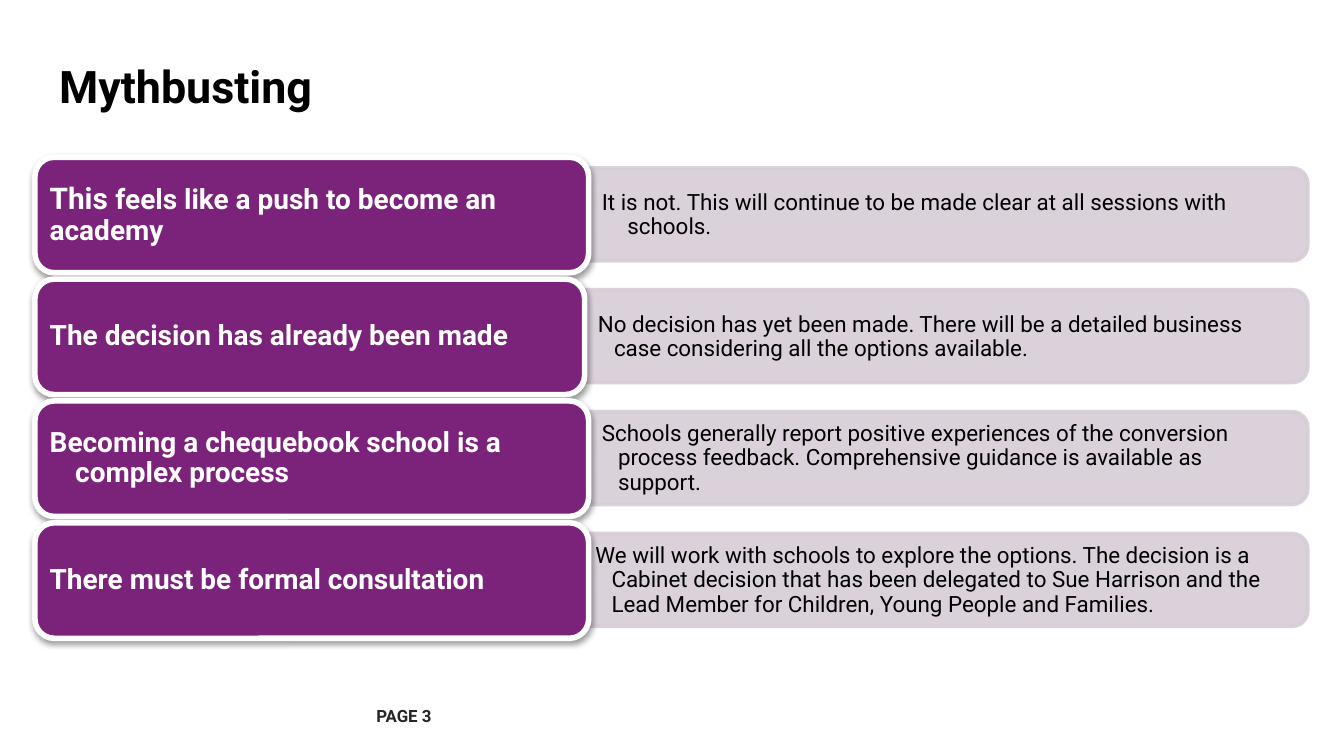
from dataclasses import dataclass

from lxml import etree
from pptx import Presentation
from pptx.dml.color import RGBColor
from pptx.enum import shapes, text
from pptx.oxml import ns
from pptx.util import Inches, Pt


@dataclass(frozen=True)
class Theme:
    font: str = "Roboto"
    myth: str = "7B237A"
    fact: str = "D7CDD7"
    light: str = "FFFFFF"
    dark: str = "000000"
    grey: str = "262626"
    title: int = 24
    lead: int = 16
    head: int = 15
    body: int = 12
    foot: int = 9


T = Theme()

# Each row: myth runs (text, size), myth indent, fact, fact indent, fact insets, card width
ROWS = [
    ([("This ", T.lead), ("feels like a push to become an academy", T.head)], 0,
     "It is not. This will continue to be made clear at all sessions with schools.",
     0.19, (0.1, 0.05), 4.12),
    ([("The decision has already been made", T.head)], 0.19,
     "No decision has yet been made. There will be a detailed business case "
     "considering all the options available.",
     0.12, (0.1, 0.05), 4.09),
    ([("Becoming a chequebook school is a complex process", T.head)], 0.19,
     "Schools generally report positive experiences of the conversion process "
     "feedback. Comprehensive guidance is available as support.",
     0.12, (0.1, 0.05), 4.12),
    ([("There must be formal consultation", T.head)], 0.19,
     "We will work with schools to explore the options. The decision is a Cabinet "
     "decision that has been delegated to Sue Harrison and the Lead Member for "
     "Children, Young People and Families.",
     0.12, (0.05, 0.03), 4.12),
]


def add_sub(node, tag, **attrs):
    return etree.SubElement(node, ns.qn(tag), {k: str(v) for k, v in attrs.items()})


def add_text(slide, box, runs, color, bold=True, indent=0, inset=(0.09, 0.04), space=1.0):
    """Place one paragraph of (text, size) runs, with a hanging indent."""
    frame = slide.shapes.add_textbox(*map(Inches, box)).text_frame
    frame.word_wrap = True
    frame.vertical_anchor = text.MSO_ANCHOR.MIDDLE
    frame.margin_left = frame.margin_right = Inches(inset[0])
    frame.margin_top = frame.margin_bottom = Inches(inset[1])
    para = frame.paragraphs[0]
    para.line_spacing = space
    if indent:
        props = para._p.get_or_add_pPr()
        props.set("marL", str(Inches(indent)))
        props.set("indent", str(-Inches(indent)))
    for words, size in runs:
        run = para.add_run()
        run.text = words
        run.font.name = T.font
        run.font.size = Pt(size)
        run.font.bold = bold
        run.font.color.rgb = RGBColor.from_string(color)


def add_block(slide, kind, box, fill, line, width):
    shape = slide.shapes.add_shape(kind, *map(Inches, box))
    shape.shadow.inherit = False
    shape.fill.solid()
    shape.fill.fore_color.rgb = RGBColor.from_string(fill)
    shape.line.color.rgb = RGBColor.from_string(line)
    shape.line.width = Pt(width)
    return shape


def add_fact(slide, box, words, indent, inset):
    """A pale bar, rounded on its right end, with the answer on it."""
    x, y, w, h = box
    # The preset is rounded on top, so build it upright and turn it
    upright = (x + (w - h) / 2, y + (h - w) / 2, h, w)
    bar = add_block(slide, shapes.MSO_SHAPE.ROUND_2_SAME_RECTANGLE, upright, T.fact, T.fact, 2)
    bar.rotation = 90
    for color in bar._element.spPr.iter(ns.qn("a:srgbClr")):
        add_sub(color, "a:alpha", val=90000)
    add_text(slide, (x, y + 0.04, w - 0.03, 0.62), [(words, T.body)], T.dark,
             bold=False, indent=indent, inset=inset, space=0.9)


def add_myth(slide, box, runs, indent):
    """A purple card with a white edge and a soft shadow."""
    x, y, w, h = box
    card = add_block(slide, shapes.MSO_SHAPE.ROUNDED_RECTANGLE, box, T.myth, T.light, 3)
    effects = card._element.spPr.find(ns.qn("a:effectLst"))
    shade = add_sub(effects, "a:outerShdw", blurRad=Pt(3.1), dist=Pt(1.6),
                    dir=5400000, rotWithShape=0)
    add_sub(add_sub(shade, "a:srgbClr", val=T.dark), "a:alpha", val=38000)
    pad = 0.04
    add_text(slide, (x + pad, y + pad, w - 2 * pad, h - 2 * pad), runs, T.light,
             indent=indent, inset=(0.07, 0.03), space=0.9)


def add_rows(slide, box):
    """Myths on the left, facts on the right, at an even pitch."""
    x, y, w, h = box
    tall = 0.86
    step = (h - tall) / (len(ROWS) - 1)
    for i, (myth, hang, fact, indent, inset, wide) in enumerate(ROWS):
        top = y + i * step
        add_fact(slide, (x + wide, top + 0.08, w - wide, 0.69), fact, indent, inset)
        add_myth(slide, (x, top, wide, tall), myth, hang)


def main():
    deck = Presentation()
    # Widescreen, 16 to 9
    deck.slide_width, deck.slide_height = Inches(10), Inches(10 * 9 / 16)
    slide = deck.slides.add_slide(deck.slide_layouts[6])

    # Page label and title
    add_text(slide, (2.71, 5.18, 0.87, 0.3), [("PAGE 3", T.foot)], T.grey)
    add_text(slide, (0.35, 0.23, 9, 0.82), [("Mythbusting", T.title)], T.dark)

    # Myths and facts
    add_rows(slide, (0.26, 1.17, 9.47, 3.58))
    deck.save("out.pptx")


if __name__ == "__main__":
    main()
